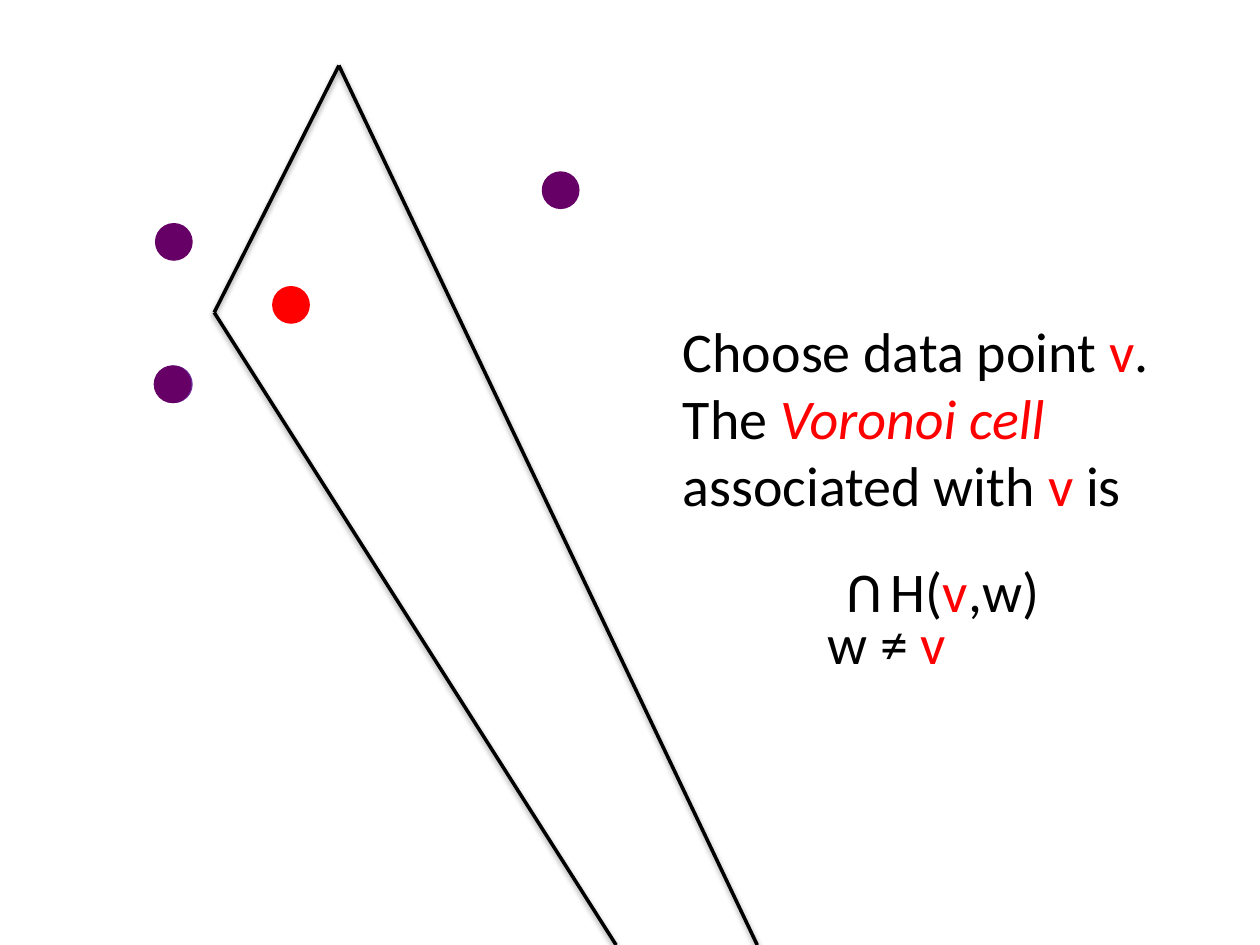
from dataclasses import dataclass

import pptx
import pptx.dml.color
import pptx.enum.shapes
import pptx.enum.text
import pptx.util
from pptx.util import Inches

BLACK = "000000"
RED = "FF0000"
PURPLE = "660066"
VIOLET = "7030A0"
DOT_SIZE = 0.3


@dataclass(frozen=True)
class Dot:
    left: float
    top: float
    color: str


@dataclass(frozen=True)
class Piece:
    text: str
    color: str = BLACK
    italic: bool = False


@dataclass(frozen=True)
class Line:
    pieces: tuple[Piece, ...]
    centered: bool = False
    space_before: float = 0


@dataclass(frozen=True)
class Label:
    left: float
    top: float
    width: float
    height: float
    lines: tuple[Line, ...]
    rotation: float = 0


V = Piece("v", RED)
BACK_DOTS = (
    Dot(1.23, 2.9, VIOLET),
    Dot(2.16, 2.27, RED),
    Dot(1.23, 1.77, PURPLE),
    Dot(4.3, 1.36, PURPLE),
)
FRONT_DOT = Dot(1.22, 2.9, PURPLE)
CELL_BOUNDARY = ((4.89, 7.5), (1.7, 2.48), (2.69, 0.52), (6.01, 7.5))
LABELS = (
    Label(5.32, 2.46, 4.68, 2.56, (
        Line((Piece("Choose data point "), V, Piece("."))),
        Line((
            Piece("The "),
            Piece("Voronoi cell ", RED, True),
            Piece("associated with "),
            V,
            Piece(" is"),
        )),
        Line((Piece("H("), V, Piece(",w)")), centered=True, space_before=22),
    )),
    Label(6.76, 4.43, 0.34, 0.64, (Line((Piece("U"),)),), rotation=180),
    Label(6.47, 4.78, 1.82, 0.64, (Line((Piece("w ≠ "), V)),)),
)


def rgb(color: str) -> pptx.dml.color.RGBColor:
    return pptx.dml.color.RGBColor.from_string(color)


def draw_dot(slide: pptx.slide.Slide, dot: Dot) -> None:
    shape = slide.shapes.add_shape(
        pptx.enum.shapes.MSO_SHAPE.OVAL,
        Inches(dot.left), Inches(dot.top), Inches(DOT_SIZE), Inches(DOT_SIZE),
    )
    shape.shadow.inherit = False
    shape.fill.solid()
    shape.fill.fore_color.rgb = rgb(dot.color)
    shape.line.fill.background()


def draw_edge(
    slide: pptx.slide.Slide,
    start: tuple[float, float],
    end: tuple[float, float],
) -> None:
    connector = slide.shapes.add_connector(
        pptx.enum.shapes.MSO_CONNECTOR.STRAIGHT,
        *(Inches(value) for value in start + end),
    )
    connector.line.color.rgb = rgb(BLACK)
    connector.line.width = pptx.util.Pt(2)


def draw_label(slide: pptx.slide.Slide, label: Label) -> None:
    shape = slide.shapes.add_textbox(
        Inches(label.left), Inches(label.top),
        Inches(label.width), Inches(label.height),
    )
    shape.rotation = label.rotation
    text_frame = shape.text_frame
    text_frame.word_wrap = True
    for index, line in enumerate(label.lines):
        paragraph = text_frame.add_paragraph() if index else text_frame.paragraphs[0]
        paragraph.space_before = pptx.util.Pt(line.space_before)
        if line.centered:
            paragraph.alignment = pptx.enum.text.PP_ALIGN.CENTER
        for piece in line.pieces:
            run = paragraph.add_run()
            run.text = piece.text
            run.font.name = "Calibri"
            run.font.size = pptx.util.Pt(32)
            run.font.italic = piece.italic
            run.font.color.rgb = rgb(piece.color)


def main() -> None:
    presentation = pptx.Presentation()
    presentation.slide_width = Inches(10)
    presentation.slide_height = Inches(7.5)
    slide = presentation.slides.add_slide(presentation.slide_layouts[6])
    for dot in BACK_DOTS:
        draw_dot(slide, dot)
    for start, end in zip(CELL_BOUNDARY, CELL_BOUNDARY[1:]):
        draw_edge(slide, start, end)
    for label in LABELS:
        draw_label(slide, label)
    draw_dot(slide, FRONT_DOT)
    presentation.save("out.pptx")


if __name__ == "__main__":
    main()
